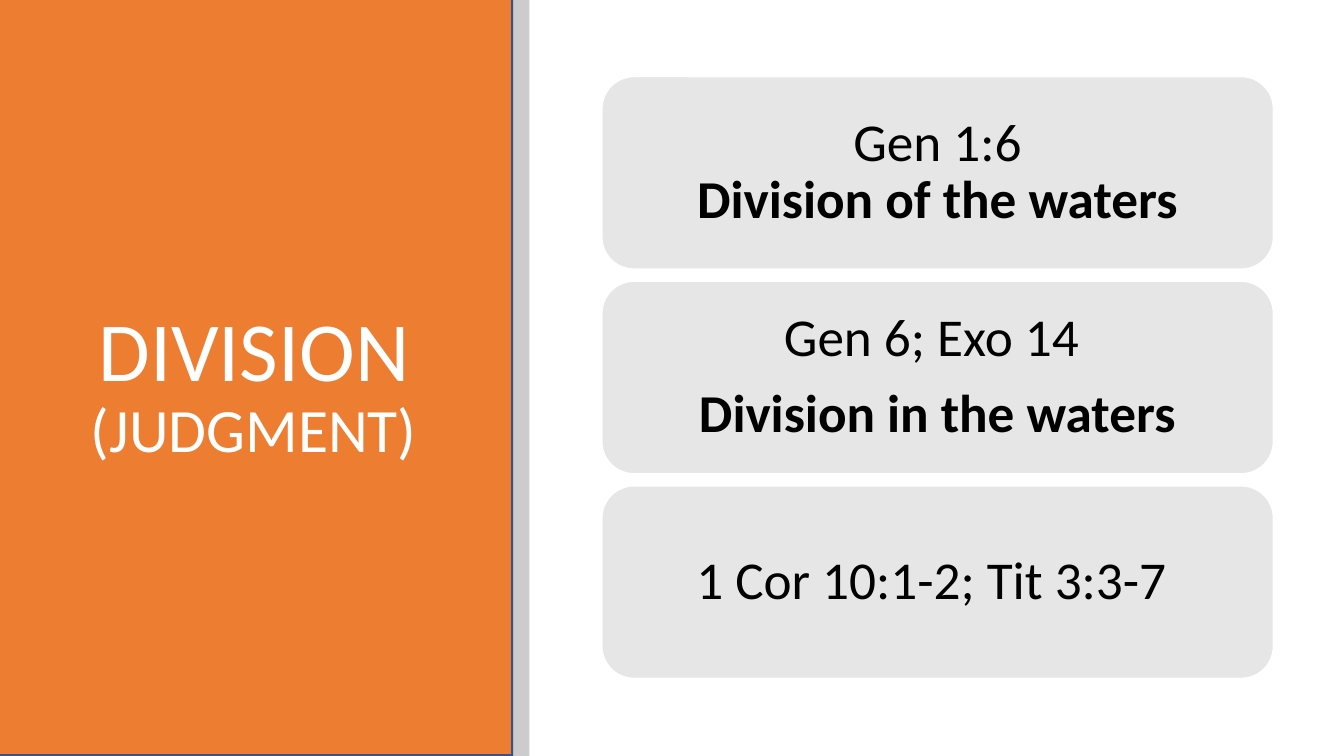
from lxml.etree import SubElement
from pptx import Presentation
from pptx.dml.color import RGBColor
from pptx.enum.shapes import MSO_SHAPE
from pptx.enum.text import MSO_ANCHOR, MSO_AUTO_SIZE, PP_ALIGN
from pptx.oxml.ns import qn
from pptx.util import Emu, Pt

EMU_PER_PX = 9144  # 100 px to the inch
SLIDE_W, SLIDE_H = 1333, 750
PANEL_W = 509
CARD_LEFT, CARD_TOP, CARD_W, CARD_H = 597, 76, 666, 191
CARD_PITCH = 203
CARD_INSET = 16

FONT = "Calibri"
BLACK = RGBColor(0x00, 0x00, 0x00)
WHITE = RGBColor(0xFF, 0xFF, 0xFF)
CHARCOAL = RGBColor(0x40, 0x40, 0x40)
ORANGE = RGBColor(0xED, 0x7D, 0x31)
NAVY = RGBColor(0x32, 0x54, 0x91)
LIGHT_GRAY = RGBColor(0xE7, 0xE6, 0xE6)

# Each card holds paragraphs, each paragraph lines, each line (text, bold).
CARDS = [
    [[("Gen 1:6", False), ("Division of the waters", True)]],
    [[("Gen 6; Exo 14 ", False)], [("Division in the waters", True)]],
    [[("1 Cor 10:1-2; Tit 3:3-7 ", False)]],
]


def px(length):
    return Emu(length * EMU_PER_PX)


def add_box(slide, kind, box, fill, line=None):
    shape = slide.shapes.add_shape(kind, *map(px, box))
    shape.shadow.inherit = False
    shape.fill.solid()
    shape.fill.fore_color.rgb = fill
    if line is None:
        shape.line.fill.background()
    else:
        shape.line.color.rgb = line
        shape.line.width = Pt(1)
    return shape


def set_opacity(shape, percent):
    color = shape.fill._xPr.find(qn("a:solidFill"))[0]
    SubElement(color, qn("a:alpha")).set("val", str(percent * 1000))


def add_run(paragraph, text, size, color, bold=False):
    run = paragraph.add_run()
    run.text = text
    run.font.name = FONT
    run.font.size = Pt(size)
    run.font.bold = bold
    run.font.color.rgb = color


def center(paragraph):
    paragraph.alignment = PP_ALIGN.CENTER
    paragraph.line_spacing = 0.9


def add_card(slide, top, paragraphs):
    card = add_box(slide, MSO_SHAPE.ROUNDED_RECTANGLE,
                   (CARD_LEFT, top, CARD_W, CARD_H), LIGHT_GRAY, WHITE)
    frame = card.text_frame
    frame.word_wrap = True
    frame.vertical_anchor = MSO_ANCHOR.MIDDLE
    frame.margin_left = frame.margin_right = px(CARD_INSET)
    frame.margin_top = frame.margin_bottom = px(CARD_INSET)
    for number, lines in enumerate(paragraphs):
        paragraph = frame.add_paragraph() if number else frame.paragraphs[0]
        center(paragraph)
        paragraph.space_after = Pt(13)
        for line_number, (text, bold) in enumerate(lines):
            if line_number:
                paragraph.add_line_break()
            add_run(paragraph, text, 38, BLACK, bold)


def set_title(slide):
    title = slide.shapes.title
    title.left, title.top, title.width, title.height = map(px, (48, 89, 408, 591))
    frame = title.text_frame
    frame.word_wrap = True
    frame.auto_size = MSO_AUTO_SIZE.NONE
    frame.vertical_anchor = MSO_ANCHOR.MIDDLE
    heading = frame.paragraphs[0]
    center(heading)
    add_run(heading, "DIVISION ", 60, WHITE)
    add_run(heading, "(JUDGMENT)", 44, WHITE)
    # Bring the title in front of the orange panel.
    slide.shapes._spTree.append(title._element)


def main():
    prs = Presentation()
    prs.slide_width, prs.slide_height = px(SLIDE_W), px(SLIDE_H)
    slide = prs.slides.add_slide(prs.slide_layouts[5])

    add_box(slide, MSO_SHAPE.RECTANGLE, (0, 0, PANEL_W, SLIDE_H), CHARCOAL)
    add_box(slide, MSO_SHAPE.RECTANGLE, (-1, -1, PANEL_W, SLIDE_H), ORANGE, NAVY)
    divider = add_box(slide, MSO_SHAPE.RECTANGLE, (PANEL_W, 0, 16, SLIDE_H), BLACK)
    set_opacity(divider, 20)

    for index, paragraphs in enumerate(CARDS):
        add_card(slide, CARD_TOP + index * CARD_PITCH, paragraphs)
    set_title(slide)
    prs.save("out.pptx")


if __name__ == "__main__":
    main()
